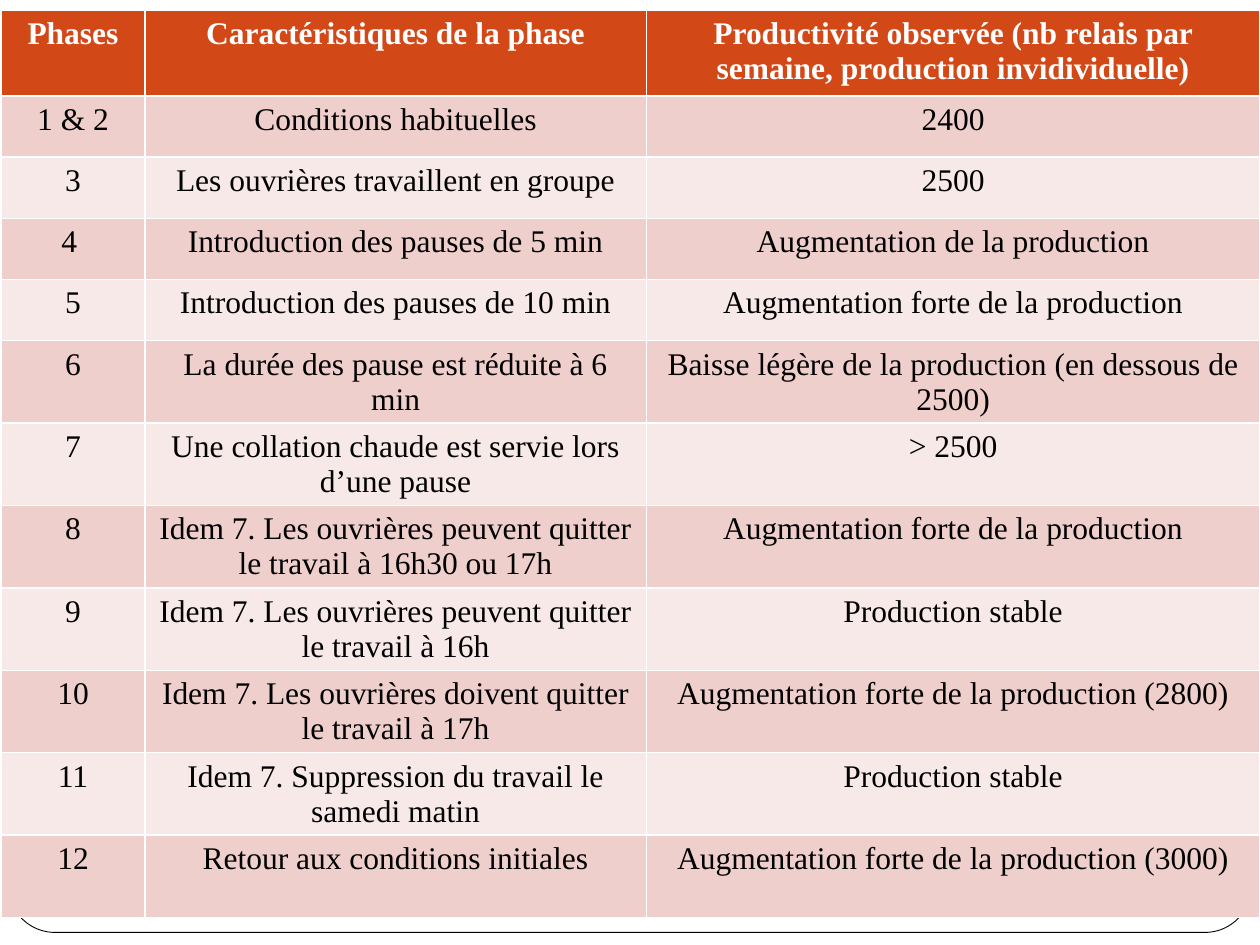
from pptx import Presentation
from pptx.dml.color import RGBColor
from pptx.enum.shapes import MSO_SHAPE
from pptx.enum.text import PP_ALIGN
from pptx.util import Pt

WHITE = RGBColor(0xFF, 0xFF, 0xFF)
BLACK = RGBColor(0x00, 0x00, 0x00)
ORANGE = RGBColor(0xD3, 0x48, 0x17)
ROSE = RGBColor(0xEF, 0xCF, 0xCC)
PALE_ROSE = RGBColor(0xF7, 0xE9, 0xE8)

HEADER_HEIGHT, SHORT_HEIGHT, TALL_HEIGHT = 49, 35, 47.1
COLUMN_WIDTHS = [82.08, 286.56, 350.64]

HEADINGS = ("Phases", "Caractéristiques de la phase",
            "Productivité observée (nb relais par semaine, production invidividuelle)")
# Phase, conditions, productivity, row height
PHASES = [
    ("1 & 2", "Conditions habituelles", "2400", SHORT_HEIGHT),
    ("3", "Les ouvrières travaillent en groupe", "2500", SHORT_HEIGHT),
    ("4 ", "Introduction des pauses de 5 min",
     "Augmentation de la production", SHORT_HEIGHT),
    ("5", "Introduction des pauses de 10 min",
     "Augmentation forte de la production", SHORT_HEIGHT),
    ("6", "La durée des pause est réduite à 6 min",
     "Baisse légère de la production (en dessous de 2500)", TALL_HEIGHT),
    ("7", "Une collation chaude est servie lors d’une pause", "> 2500", TALL_HEIGHT),
    ("8", "Idem 7. Les ouvrières peuvent quitter le travail à 16h30 ou 17h",
     "Augmentation forte de la production", TALL_HEIGHT),
    ("9", "Idem 7. Les ouvrières peuvent quitter le travail à 16h",
     "Production stable", TALL_HEIGHT),
    ("10", "Idem 7. Les ouvrières doivent quitter le travail à 17h",
     "Augmentation forte de la production (2800)", TALL_HEIGHT),
    ("11", "Idem 7. Suppression du travail le samedi matin",
     "Production stable", TALL_HEIGHT),
    ("12", "Retour aux conditions initiales",
     "Augmentation forte de la production (3000)", TALL_HEIGHT),
]

prs = Presentation()
prs.slide_width, prs.slide_height = Pt(720), Pt(540)
slide = prs.slides.add_slide(prs.slide_layouts[6])

# Rounded frame behind the table
frame = slide.shapes.add_shape(MSO_SHAPE.ROUNDED_RECTANGLE,
                               Pt(5), Pt(5.8), Pt(710), Pt(527))
frame.adjustments[0] = 0.05
frame.shadow.inherit = False
frame.fill.solid()
frame.fill.fore_color.rgb = WHITE
frame.line.color.rgb = BLACK
frame.line.width = Pt(0.5)

# Table grid; the default style supplies the white borders
rows = [(*HEADINGS, HEADER_HEIGHT)] + PHASES
total_height = sum(row[-1] for row in rows)
phase_table = slide.shapes.add_table(
    len(rows), len(COLUMN_WIDTHS), Pt(0.7), Pt(5.8),
    Pt(sum(COLUMN_WIDTHS)), Pt(total_height)).table
for column, width in zip(phase_table.columns, COLUMN_WIDTHS):
    column.width = Pt(width)

# Cell texts and alternating fills
for row_index, (*texts, height) in enumerate(rows):
    is_header = row_index == 0
    band = ROSE if row_index % 2 else PALE_ROSE
    phase_table.rows[row_index].height = Pt(height)
    for column_index, text in enumerate(texts):
        cell = phase_table.cell(row_index, column_index)
        cell.fill.solid()
        cell.fill.fore_color.rgb = ORANGE if is_header else band
        cell.text = text
        paragraph = cell.text_frame.paragraphs[0]
        paragraph.alignment = PP_ALIGN.CENTER
        paragraph.font.name = "Times New Roman"
        paragraph.font.size = Pt(18)
        paragraph.font.bold = is_header
        paragraph.font.color.rgb = WHITE if is_header else BLACK

prs.save("out.pptx")
